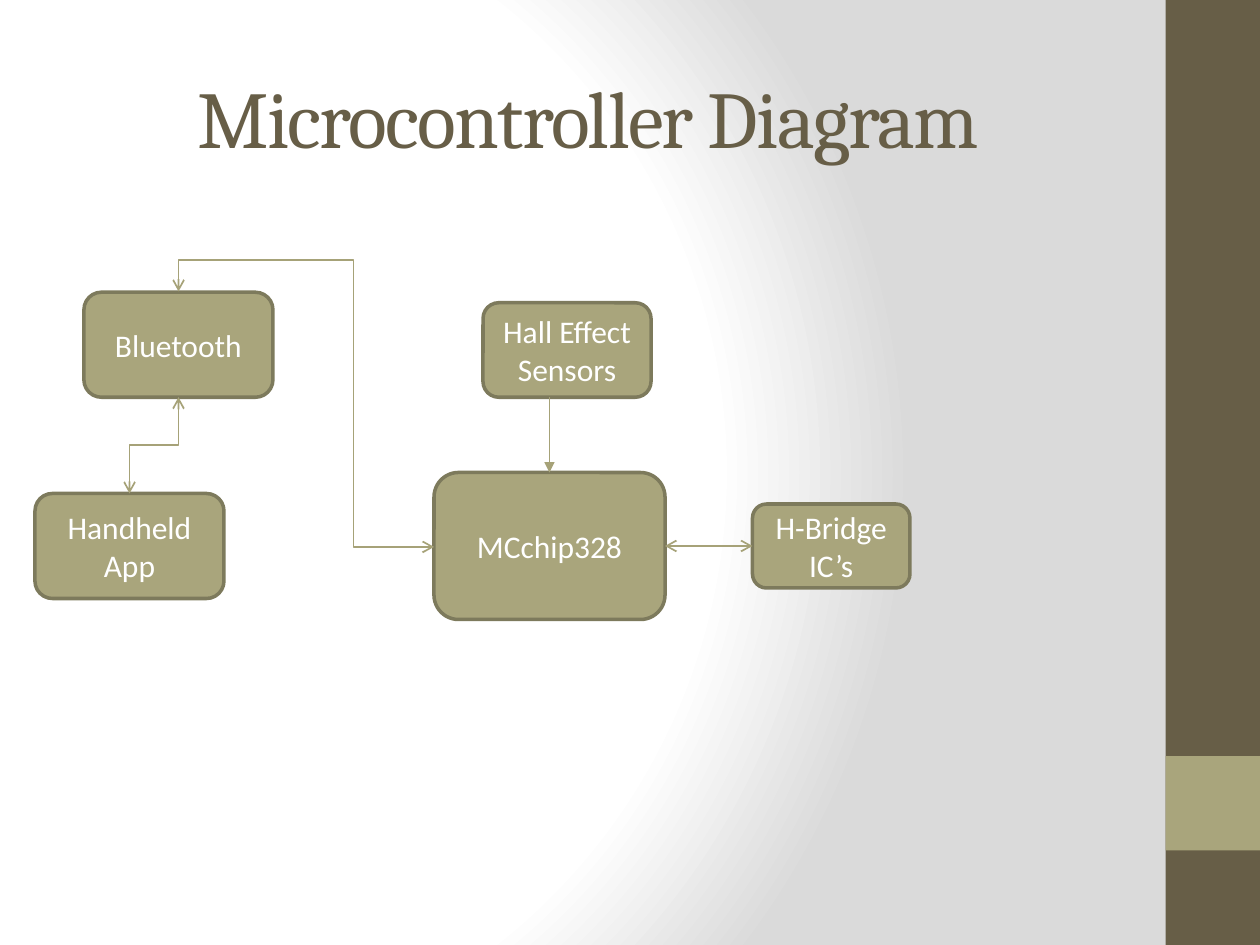
from pptx import Presentation
from pptx.dml.color import RGBColor
from pptx.enum.shapes import MSO_CONNECTOR as Conn, MSO_SHAPE as Geom
from pptx.enum.text import MSO_ANCHOR as Anchor, PP_ALIGN as Align
from pptx.oxml import parse_xml
from pptx.oxml.ns import nsdecls, qn
from pptx.util import Pt
from lxml.etree import SubElement as Sub

BROWN = RGBColor(0x67, 0x5E, 0x47)
OLIVE = RGBColor(0xA9, 0xA5, 0x7C)
EDGE = RGBColor(0x7D, 0x7A, 0x5C)
WIRE = RGBColor(0xA6, 0xA2, 0x78)
WHITE = RGBColor(0xFF, 0xFF, 0xFF)
GREY = RGBColor(0xDA, 0xDA, 0xDA)

HEAD = {"name": "Cambria", "size": Pt(46)}
BODY = {"name": "Calibri", "size": Pt(18)}


def add_box(geom, left, top, wide, high, fill):
    box = shapes.add_shape(geom, Pt(left), Pt(top), Pt(wide), Pt(high))
    box.shadow.inherit = False
    box.fill.solid()
    box.fill.fore_color.rgb = fill
    box.line.fill.background()
    return box


def set_text(shape, text, font, color):
    frame = shape.text_frame
    frame.word_wrap = True
    frame.vertical_anchor = Anchor.MIDDLE
    para = frame.paragraphs[0]
    para.alignment = Align.CENTER
    run = para.add_run()
    run.text = text
    for key, value in font.items():
        setattr(run.font, key, value)
    run.font.color.rgb = color
    return run


prs = Presentation()
prs.slide_width, prs.slide_height = Pt(720), Pt(540)
slide = prs.slides.add_slide(prs.slide_layouts[6])
shapes = slide.shapes

# Background: round gradient from white to grey
stops = "".join(
    f'<a:gs pos="{pos * 1000}"><a:srgbClr val="{color}"/></a:gs>'
    for pos, color in [(0, WHITE), (75, WHITE), (100, GREY)])
slide.element.cSld.insert(0, parse_xml(
    f'<p:bg {nsdecls("p", "a")}><p:bgPr><a:gradFill rotWithShape="1">'
    f'<a:gsLst>{stops}</a:gsLst><a:path path="circle">'
    '<a:fillToRect l="20000" t="50000" r="100000" b="50000"/></a:path>'
    '</a:gradFill><a:effectLst/></p:bgPr></p:bg>'))

# Side band
add_box(Geom.RECTANGLE, 666, 0, 54, 540, BROWN)
add_box(Geom.RECTANGLE, 666, 432, 54, 54, OLIVE)

# Title
title = shapes.add_textbox(Pt(36), Pt(21.6), Pt(600), Pt(90))
run = set_text(title, "Microcontroller Diagram", HEAD, BROWN)
run.font._element.set("spc", "-100")

# Blocks: text, left, top, width, height
blocks = [
    ("MCchip328", 248, 270, 132, 84),
    ("Bluetooth", 48, 167, 108, 60),
    ("Handheld App", 20, 282, 108, 60),
    ("H-Bridge IC’s", 430, 288, 90, 48),
    ("Hall Effect Sensors", 276, 173, 96, 54),
]
for text, *place in blocks:
    box = add_box(Geom.ROUNDED_RECTANGLE, *place, OLIVE)
    box.line.color.rgb = EDGE
    box.line.width = Pt(2)
    set_text(box, text, BODY, WHITE)

# Wires: start and end before turning, turn, preset, bends, head, tail
wires = [
    ((248, 166.5), (102, 312.5), 270, "bentConnector4", (-12400, 68500),
     "arrow", "arrow"),
    ((60.5, 240.5), (115.5, 268.5), 90, "bentConnector3", (50000,),
     "arrow", "arrow"),
    ((380, 312), (430, 312), 0, "line", (), "arrow", "arrow"),
    ((314, 227), (314, 270), 0, "line", (), None, "triangle"),
]
for start, end, turn, preset, bends, head, tail in wires:
    kind = Conn.ELBOW if bends else Conn.STRAIGHT
    wire = shapes.add_connector(kind, *map(Pt, start + end))
    wire.line.color.rgb = WIRE
    wire.line.width = Pt(1)
    props = wire._element.spPr
    if turn:
        props.find(qn("a:xfrm")).set("rot", str(turn * 60000))
    geom = props.find(qn("a:prstGeom"))
    geom.set("prst", preset)
    marks = geom.find(qn("a:avLst"))
    for num, bend in enumerate(bends, 1):
        Sub(marks, qn("a:gd"), name=f"adj{num}", fmla=f"val {bend}")
    for tag, tip in [("a:headEnd", head), ("a:tailEnd", tail)]:
        if tip:
            Sub(props.find(qn("a:ln")), qn(tag), type=tip)
    Sub(props, qn("a:effectLst"))

prs.save("out.pptx")
